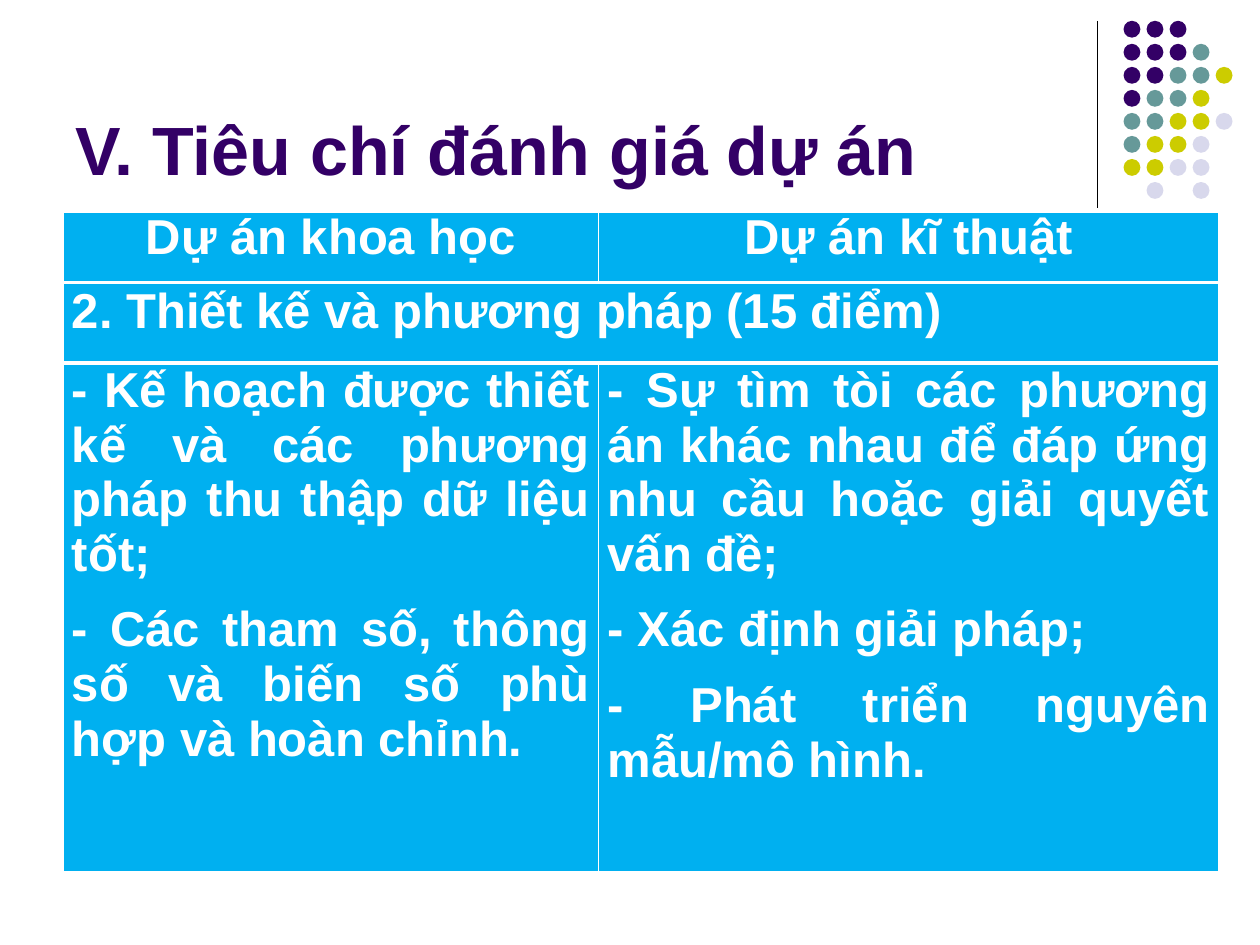
from lxml import etree
from pptx import Presentation
from pptx.dml.color import RGBColor
from pptx.enum.shapes import MSO_CONNECTOR, MSO_SHAPE
from pptx.enum.text import MSO_ANCHOR, PP_ALIGN
from pptx.oxml.ns import qn
from pptx.util import Cm, Pt

STRAIGHT = MSO_CONNECTOR.STRAIGHT
OVAL = MSO_SHAPE.OVAL
BOTTOM = MSO_ANCHOR.BOTTOM
CENTER = PP_ALIGN.CENTER
JUSTIFY = PP_ALIGN.JUSTIFY

FONT = "Arial"
PURPLE, TEAL, OLIVE, LAVENDER = "330066", "669999", "CCCC00", "D8D8EC"
BLUE, WHITE, BLACK = "00B0F0", "FFFFFF", "000000"

DOT_COLORS = {"P": PURPLE, "T": TEAL, "O": OLIVE, "L": LAVENDER}
DOT_ROWS = ["PPP", "PPPT", "PPTTO", "PTTO", "TTOOL", "TOOL", "OOLL", ".L.L"]

TABLE_LEFT = Cm(1.27)
COLUMN_WIDTHS = [Cm(10.8), Cm(12.49)]

HEADINGS = ["Dự án khoa học", "Dự án kĩ thuật"]
CRITERION = "2. Thiết kế và phương pháp (15 điểm)"
SCIENCE = [
    "- Kế hoạch được thiết kế và các phương pháp thu thập dữ liệu tốt;",
    "- Các tham số, thông số và biến số phù hợp và hoàn chỉnh.",
]
ENGINEERING = [
    "- Sự tìm tòi các phương án khác nhau để đáp ứng nhu cầu hoặc giải quyết vấn đề;",
    "- Xác định giải pháp;",
    "- Phát triển nguyên mẫu/mô hình.",
]


def color(value):
    return RGBColor.from_string(value)


def add_run(paragraph, text, size, font_color):
    run = paragraph.add_run()
    run.text = text
    run.font.name = FONT
    run.font.size = Pt(size)
    run.font.bold = True
    run.font.color.rgb = color(font_color)


def add_divider(slide):
    line = slide.shapes.add_connector(STRAIGHT, Cm(22.12), Cm(0.42), Cm(22.12), Cm(4.66))
    line.line.color.rgb = color(BLACK)
    line.line.width = Pt(0.75)
    etree.SubElement(line._element.spPr, qn("a:effectLst"))


def add_dots(slide):
    left, top, size = Cm(22.65), Cm(0.42), Cm(0.34)
    pitch = Cm(3.25) // 7
    group = slide.shapes.add_group_shape()
    for row, codes in enumerate(DOT_ROWS):
        for column, code in enumerate(codes):
            if code not in DOT_COLORS:
                continue
            dot = group.shapes.add_shape(
                OVAL, left + column * pitch, top + row * pitch, size, size)
            dot.shadow.inherit = False
            dot.fill.solid()
            dot.fill.fore_color.rgb = color(DOT_COLORS[code])
            dot.line.fill.background()


def add_title(slide, text):
    shape = slide.shapes.add_textbox(Cm(1.27), Cm(0.33), Cm(20.96), Cm(3.6))
    frame = shape.text_frame
    frame.word_wrap = True
    frame.vertical_anchor = BOTTOM
    add_run(frame.paragraphs[0], text, 39, PURPLE)


def add_table(slide, top, row_heights):
    shape = slide.shapes.add_table(
        len(row_heights), len(COLUMN_WIDTHS), TABLE_LEFT, top,
        sum(COLUMN_WIDTHS), sum(row_heights))
    table = shape.table
    table.first_row = False
    table.horz_banding = False
    for column, width in zip(table.columns, COLUMN_WIDTHS):
        column.width = width
    for row, height in zip(table.rows, row_heights):
        row.height = height
    return table


def style_cell(cell, top_width, bottom_width):
    cell.margin_left = cell.margin_right = Cm(0.18)
    cell.margin_top = cell.margin_bottom = 0
    properties = cell._tc.get_or_add_tcPr()
    widths = {"lnL": 1, "lnR": 1, "lnT": top_width, "lnB": bottom_width}
    for tag, width in widths.items():
        border = etree.SubElement(properties, qn(f"a:{tag}"), w=str(Pt(width)))
        fill = etree.SubElement(border, qn("a:solidFill"))
        etree.SubElement(fill, qn("a:srgbClr"), val=WHITE)
    cell.fill.solid()
    cell.fill.fore_color.rgb = color(BLUE)


def write_cell(cell, texts, alignment):
    frame = cell.text_frame
    for index, text in enumerate(texts):
        paragraph = frame.add_paragraph() if index else frame.paragraphs[0]
        paragraph.alignment = alignment
        paragraph.space_before = paragraph.space_after = Pt(6)
        add_run(paragraph, text, 28, WHITE)


def add_heading_table(slide):
    table = add_table(slide, Cm(4.24), [Cm(1.48)])
    for cell, heading in zip(table.rows[0].cells, HEADINGS):
        style_cell(cell, 3, 3)
        write_cell(cell, [heading], CENTER)


def add_criteria_table(slide):
    table = add_table(slide, Cm(5.72), [Cm(1.6), Cm(10.26)])
    for row, border_widths in zip(table.rows, [(1, 3), (3, 1)]):
        for cell in row.cells:
            style_cell(cell, *border_widths)
    table.cell(0, 0).merge(table.cell(0, 1))
    write_cell(table.cell(0, 0), [CRITERION], JUSTIFY)
    for cell, texts in zip(table.rows[1].cells, [SCIENCE, ENGINEERING]):
        write_cell(cell, texts, JUSTIFY)


def main():
    presentation = Presentation()
    presentation.slide_width = Cm(25.4)
    presentation.slide_height = Cm(19.05)
    slide = presentation.slides.add_slide(presentation.slide_layouts[6])
    add_divider(slide)
    add_dots(slide)
    add_title(slide, "V. Tiêu chí đánh giá dự án")
    add_heading_table(slide)
    add_criteria_table(slide)
    presentation.save("out.pptx")


if __name__ == "__main__":
    main()
